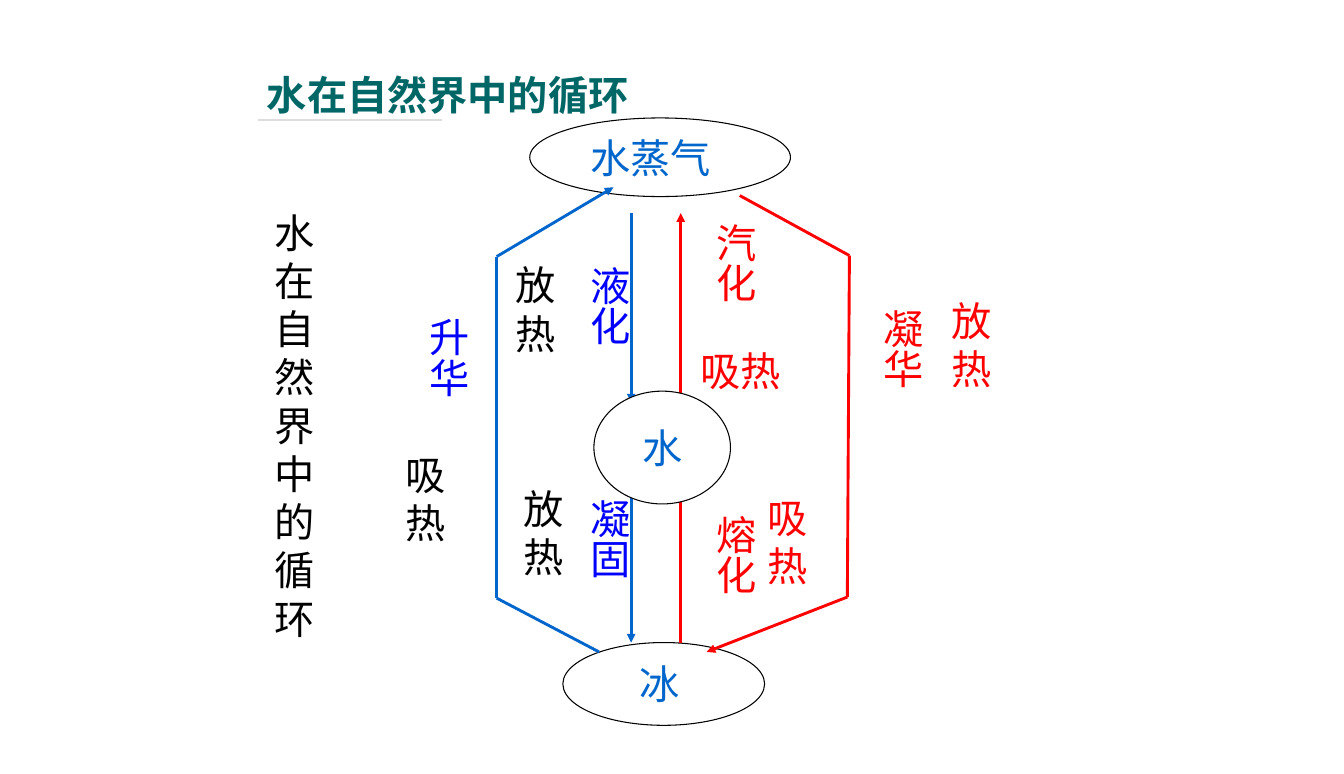
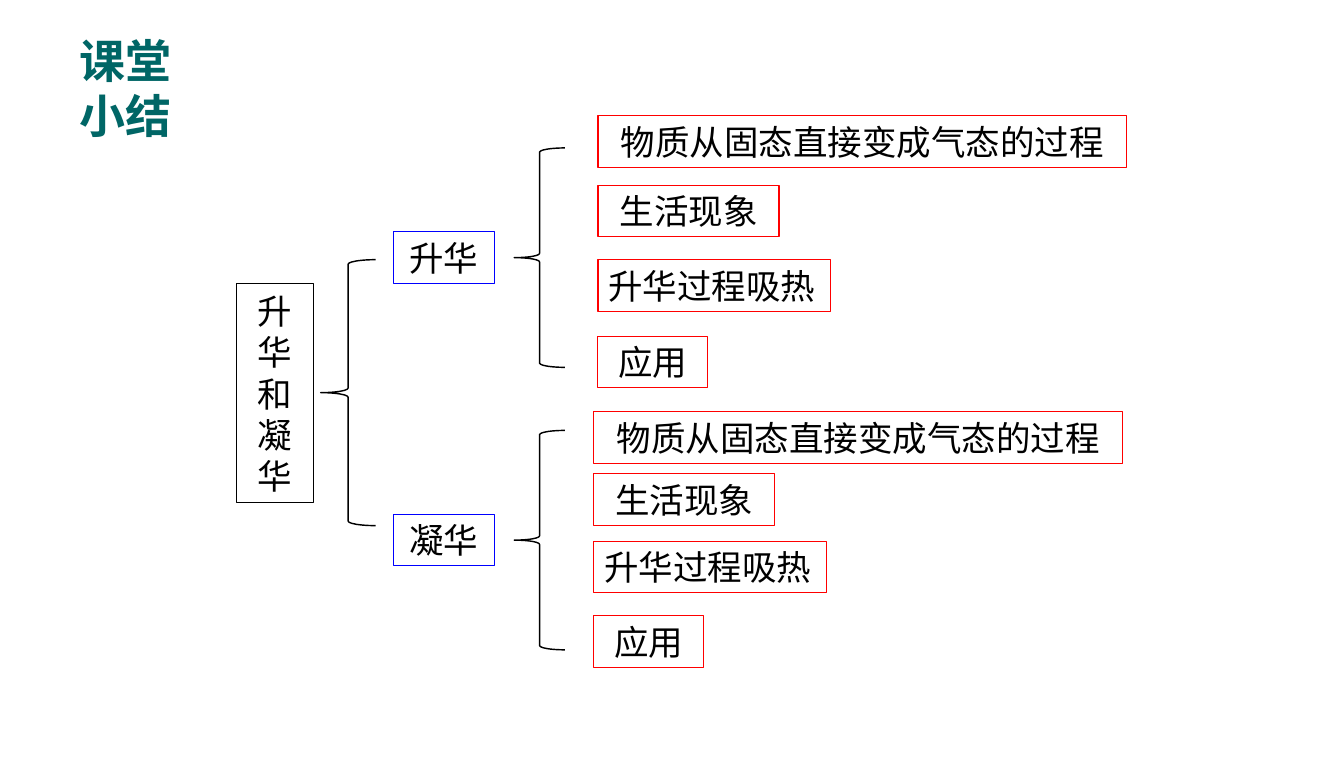
import pptx
import pptx.dml.color
import pptx.enum.shapes
import pptx.enum.text
import pptx.oxml.ns
import pptx.oxml.xmlchemy
import pptx.util
from pptx.util import Inches

RGBColor = pptx.dml.color.RGBColor
MSO_SHAPE = pptx.enum.shapes.MSO_SHAPE
ALIGN = pptx.enum.text.PP_ALIGN
ANCHOR = pptx.enum.text.MSO_ANCHOR
OxmlElement = pptx.oxml.xmlchemy.OxmlElement
qn = pptx.oxml.ns.qn

BLACK = RGBColor(0x00, 0x00, 0x00)
WHITE = RGBColor(0xFF, 0xFF, 0xFF)
RED = RGBColor(0xFF, 0x00, 0x00)
BLUE = RGBColor(0x00, 0x00, 0xFF)
AZURE = RGBColor(0x00, 0x66, 0xCC)
TEAL = RGBColor(0x00, 0x66, 0x66)
LIGHT_GREY = RGBColor(0xDD, 0xDD, 0xDD)

CJK_FONT = "Noto Sans CJK SC"
LATIN_FONT = "Arial"
LINE_PITCH = 1.2


def write_text(tf, text, size=28, color=BLACK, font=CJK_FONT, bold=False,
               align=ALIGN.LEFT, anchor=ANCHOR.TOP, wrap=True):
    tf.word_wrap = wrap
    tf.auto_size = pptx.enum.text.MSO_AUTO_SIZE.NONE
    tf.vertical_anchor = anchor
    tf.margin_left = tf.margin_right = Inches(0.1)
    tf.margin_top = tf.margin_bottom = Inches(0.05)
    p = tf.paragraphs[0]
    p.alignment = align
    p.line_spacing = pptx.util.Pt(size * LINE_PITCH)
    r = p.add_run()
    r.text = text
    r.font.size = pptx.util.Pt(size)
    r.font.bold = bold
    r.font.name = font
    r.font.color.rgb = color
    ea = OxmlElement("a:ea")
    ea.set("typeface", CJK_FONT)
    r.font._element.find(qn("a:latin")).addnext(ea)


class Deck:
    """Holds the shared style and the current slide."""

    def __init__(self, width, height):
        self.prs = pptx.Presentation()
        self.prs.slide_width = Inches(width)
        self.prs.slide_height = Inches(height)
        self.slide = None

    def new_slide(self, title, box, **fmt):
        self.slide = self.prs.slides.add_slide(self.prs.slide_layouts[5])
        sp = self.slide.shapes.title
        sp.left, sp.top, sp.width, sp.height = map(Inches, box)
        write_text(sp.text_frame, title, color=TEAL, bold=True, **fmt)

    def shape(self, kind, box, line=BLACK, weight=0.75, fill=None):
        sp = self.slide.shapes.add_shape(kind, *map(Inches, box))
        sp.shadow.inherit = False
        if fill is None:
            sp.fill.background()
        else:
            sp.fill.solid()
            sp.fill.fore_color.rgb = fill
        sp.line.color.rgb = line
        sp.line.width = pptx.util.Pt(weight)
        return sp

    def state(self, text, box, shift=0):
        """White ellipse; shift moves its label to the left."""
        sp = self.shape(MSO_SHAPE.OVAL, box, fill=WHITE)
        tf = sp.text_frame
        write_text(tf, text, color=AZURE, align=ALIGN.CENTER,
                   anchor=ANCHOR.MIDDLE, wrap=False)
        tf.margin_right = Inches(0.1 + 2 * shift)

    def box(self, text, box, line, align=ALIGN.CENTER):
        sp = self.shape(MSO_SHAPE.RECTANGLE, box, line)
        write_text(sp.text_frame, text, size=24, font=LATIN_FONT,
                   align=align, anchor=ANCHOR.MIDDLE)

    def brace(self, *box):
        self.shape(MSO_SHAPE.LEFT_BRACE, box, weight=1)

    def label(self, text, box, color=BLACK, vertical=False):
        tf = self.slide.shapes.add_textbox(*map(Inches, box)).text_frame
        write_text(tf, text, color=color)
        if vertical:
            tf._txBody.bodyPr.set("vert", "eaVert")

    def line(self, start, end, color, weight=2, arrow=False):
        cx = self.slide.shapes.add_connector(
            pptx.enum.shapes.MSO_CONNECTOR.STRAIGHT, *map(Inches, start + end))
        cx.line.color.rgb = color
        cx.line.width = pptx.util.Pt(weight)
        if arrow:
            tail = OxmlElement("a:tailEnd")
            tail.set("type", "triangle")
            cx.line._get_or_add_ln().append(tail)
        cx._element.spPr.append(OxmlElement("a:effectLst"))

    def route(self, points, color):
        """Chain of lines with an arrowhead on the last one."""
        last = len(points) - 2
        for i, (start, end) in enumerate(zip(points, points[1:])):
            self.line(start, end, color, arrow=i == last)


def water_cycle(deck):
    deck.new_slide("水在自然界中的循环", (2.48, 0.63, 3.74, 0.57), wrap=False)
    deck.line((2.49, 1.16), (4.27, 1.16), LIGHT_GREY, weight=1)

    # Vapour and ice, then the arrows, then water over the arrow ends
    deck.state("水蒸气", (5.12, 1.14, 2.52, 0.76), shift=0.09)
    deck.state("冰", (5.44, 6.21, 1.95, 0.8), shift=0.04)
    for top, bottom in ((2.06, 3.89), (4.72, 6.21)):
        deck.route([(6.1, top), (6.1, bottom)], AZURE)
        deck.route([(6.58, bottom), (6.58, top)], RED)
    deck.route([(5.79, 6.3), (4.8, 5.78), (4.8, 2.48), (5.93, 1.81)], AZURE)
    deck.route([(7.15, 1.89), (8.21, 2.47), (8.19, 5.77), (6.83, 6.3)], RED)
    deck.state("水", (5.74, 3.78, 1.32, 1.09))

    # Names of the changes, set vertically
    for text, left, top, height, color in (
            ("液化", 5.5, 2.47, 1.1, BLUE),
            ("汽化", 6.72, 2.06, 1.26, RED),
            ("熔化", 6.72, 4.88, 1.02, RED),
            ("凝固", 5.5, 4.72, 1.18, BLUE),
            ("升华", 3.94, 2.97, 2.03, BLUE),
            ("凝华", 8.33, 2.89, 1.45, RED)):
        deck.label(text, (left, top, 0.67, height), color, vertical=True)

    # Heat taken in or given off, one character a line
    for text, left, top, color in (
            ("吸热", 7.32, 4.72, RED),
            ("吸热", 3.82, 4.3, BLACK),
            ("放热", 4.88, 2.47, BLACK),
            ("放热", 4.96, 4.63, BLACK),
            ("放热", 9.1, 2.81, RED)):
        deck.label(text, (left, top, 0.65, 1.04), color)
    deck.label("吸热", (6.67, 3.3, 1.22, 0.57), RED)
    deck.label("水在自然界中的循环", (2.56, 1.96, 0.4, 4.34))


def summary(deck):
    deck.new_slide("课堂小结", (0.67, 0.26, 1.38, 1.18), size=32, font=LATIN_FONT)

    # Root
    deck.box("升华和凝华", (2.29, 2.74, 0.74, 2.12), BLACK)
    deck.brace(3.1, 2.51, 0.53, 2.57)

    # Branches, each with the same four points
    points = (("物质从固态直接变成气态的过程", 5.11, ALIGN.CENTER),
              ("生活现象", 1.75, ALIGN.CENTER),
              ("升华过程吸热", 2.25, ALIGN.LEFT),
              ("应用", 1.06, ALIGN.CENTER))
    for name, top, brace_top, left, tops in (
            ("升华", 2.24, 1.43, 5.78, (1.12, 1.79, 2.51, 3.25)),
            ("凝华", 4.97, 4.16, 5.74, (3.98, 4.58, 5.23, 5.95))):
        deck.box(name, (3.8, top, 0.98, 0.5), BLUE)
        deck.brace(4.97, brace_top, 0.49, 2.12)
        for (text, width, align), y in zip(points, tops):
            deck.box(text, (left, y, width, 0.5), RED, align)


def main():
    deck = Deck(12.99, 7.48)
    water_cycle(deck)
    summary(deck)
    deck.prs.save("out.pptx")


if __name__ == "__main__":
    main()
